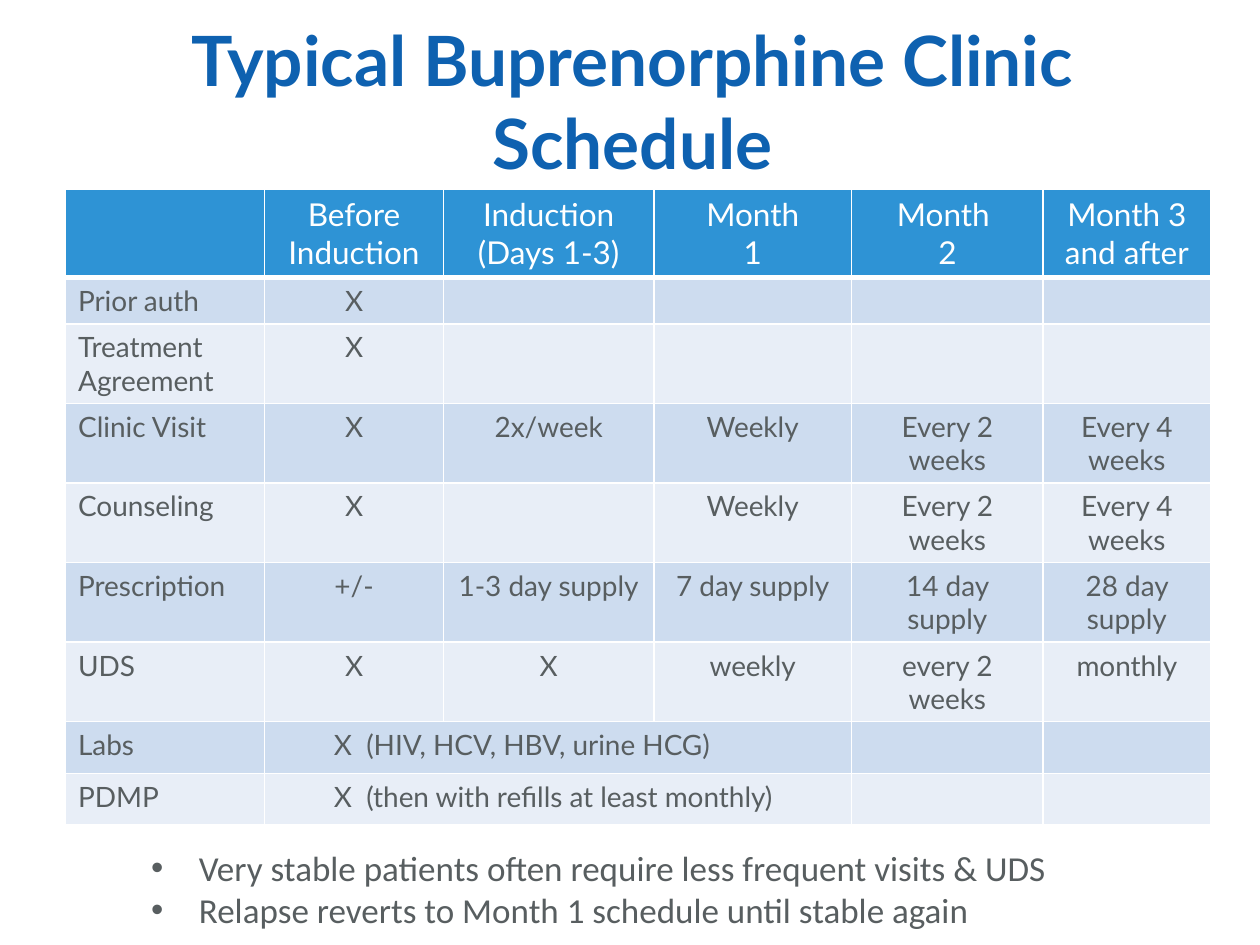
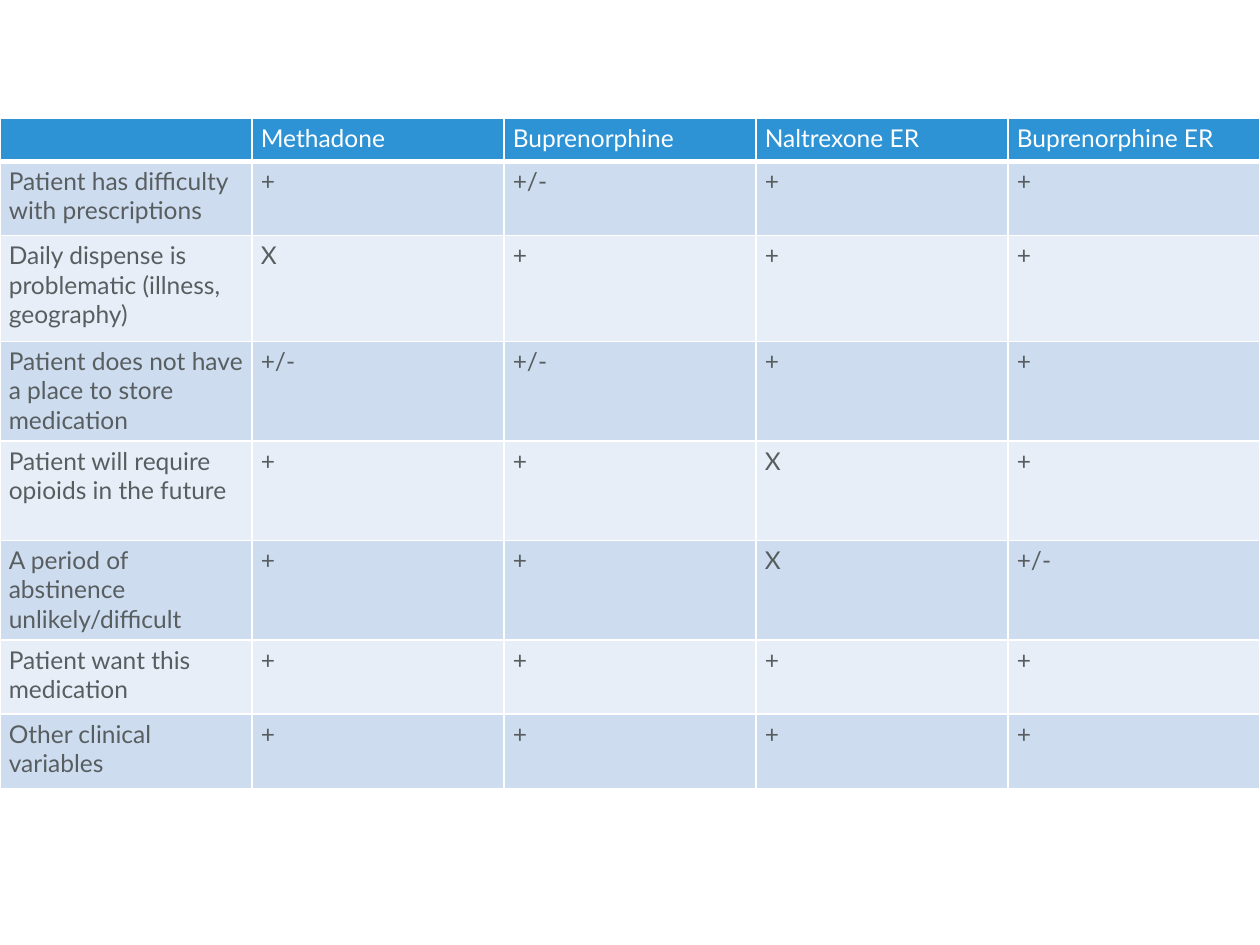
from lxml.etree import SubElement
from pptx import Presentation
from pptx.dml.color import RGBColor
from pptx.enum.text import MSO_ANCHOR as Anchor, MSO_AUTO_SIZE as AutoSize, PP_ALIGN as Align
from pptx.oxml.ns import qn
from pptx.util import Inches, Pt

TITLE_ONLY, BLANK = 5, 6


def color(hex_value):
    return RGBColor.from_string(hex_value)


class Deck:
    FONT = "Lato"
    TITLE, HEADER, TEXT, WHITE = "0E61B0", "2E93D5", "585E60", "FFFFFF"
    BANDS = "CDDCEF", "E8EEF7"

    def __init__(self):
        self.presentation = Presentation()
        self.presentation.slide_width = Inches(10)
        self.presentation.slide_height = Inches(7.5)
        self.slide = None

    def add_slide(self, layout):
        layouts = self.presentation.slide_layouts
        self.slide = self.presentation.slides.add_slide(layouts[layout])

    def run(self, paragraph, text, size, hex_value, bold=False, font=FONT):
        run = paragraph.add_run()
        run.text = text
        run.font.name = font
        run.font.size = Pt(size)
        run.font.bold = bold
        run.font.color.rgb = color(hex_value)

    def title(self, text, left, top, width, height):
        shape = self.slide.shapes.title
        shape.left, shape.top = Inches(left), Inches(top)
        shape.width, shape.height = Inches(width), Inches(height)
        frame = shape.text_frame
        frame.auto_size = AutoSize.NONE
        frame.vertical_anchor = Anchor.MIDDLE
        frame.paragraphs[0].alignment = Align.CENTER
        self.run(frame.paragraphs[0], text, 39.6, self.TITLE, bold=True)

    def bullets(self, lines, left, top, width, height):
        box = self.slide.shapes.add_textbox(
            Inches(left), Inches(top), Inches(width), Inches(height))
        frame = box.text_frame
        frame.word_wrap = True
        for index, line in enumerate(lines):
            paragraph = frame.add_paragraph() if index else frame.paragraphs[0]
            properties = paragraph._p.get_or_add_pPr()
            properties.set("marL", str(Inches(0.38)))
            properties.set("indent", str(-Inches(0.38)))
            SubElement(properties, qn("a:buFont"), typeface="Arial")
            SubElement(properties, qn("a:buChar"), char="•")
            self.run(paragraph, line, 20, self.TEXT, font="Calibri")

    def borders(self, cell, bottom):
        """Draw white cell borders; only the bottom width varies."""
        properties = cell._tc.get_or_add_tcPr()
        for side, width in (("L", 1), ("R", 1), ("T", 1), ("B", bottom)):
            line = SubElement(properties, qn(f"a:ln{side}"), w=str(Pt(width)))
            fill = SubElement(line, qn("a:solidFill"))
            SubElement(fill, qn("a:srgbClr"), val=self.WHITE)

    def cell(self, cell, text, size, is_header, fill, alignment, margins):
        self.borders(cell, bottom=3 if is_header else 1)
        cell.fill.solid()
        cell.fill.fore_color.rgb = color(fill)
        cell.margin_left = cell.margin_right = Inches(margins[0])
        cell.margin_top = cell.margin_bottom = Inches(margins[1])
        frame = cell.text_frame
        if not text:
            SubElement(frame.paragraphs[0]._p, qn("a:endParaRPr"), sz=str(size * 100))
            return
        for index, line in enumerate(text.split("\n")):
            paragraph = frame.add_paragraph() if index else frame.paragraphs[0]
            paragraph.alignment = alignment
            self.run(paragraph, line, size, self.WHITE if is_header else self.TEXT)

    def table(self, rows, left, top, widths, heights, header_size, body_size,
              alignment=Align.LEFT, margins=(0.1, 0.05)):
        """Add a banded table; alignment applies to all but the first column."""
        table = self.slide.shapes.add_table(
            len(rows), len(widths), Inches(left), Inches(top),
            Inches(sum(widths)), Inches(sum(heights))).table
        for column, width in zip(table.columns, widths):
            column.width = Inches(width)
        for row_index, (row, height) in enumerate(zip(rows, heights)):
            table.rows[row_index].height = Inches(height)
            is_header = row_index == 0
            fill = self.HEADER if is_header else self.BANDS[(row_index - 1) % 2]
            for column_index in range(len(widths)):
                text = row[column_index] if column_index < len(row) else ""
                self.cell(table.cell(row_index, column_index), text,
                          header_size if is_header else body_size, is_header, fill,
                          alignment if column_index else Align.LEFT, margins)
        return table


SCHEDULE = [
    ["", "Before Induction", "Induction\n(Days 1-3)", "Month\n1", "Month \n2",
     "Month 3 and after"],
    ["Prior auth", "X"],
    ["Treatment Agreement", "X"],
    ["Clinic Visit", "X", "2x/week", "Weekly", "Every 2 weeks", "Every 4 weeks"],
    ["Counseling", "X", "", "Weekly", "Every 2 weeks", "Every 4 weeks"],
    ["Prescription", "+/-", "1-3 day supply", "7 day supply", "14 day supply",
     "28 day supply"],
    ["UDS", "X", "X", "weekly", "every 2 weeks", "monthly"],
    ["Labs", "X  (HIV, HCV, HBV, urine HCG)"],
    ["PDMP", "X  (then with refills at least monthly)"],
]

MEDICATION_CHOICE = [
    ["", "Methadone", "Buprenorphine", "Naltrexone ER", "Buprenorphine ER"],
    ["Patient has difficulty with prescriptions", "+", "+/-", "+", "+"],
    ["Daily dispense is problematic (illness, geography)", "X", "+", "+", "+"],
    ["Patient does not have a place to store medication", "+/-", "+/-", "+", "+"],
    ["Patient will require opioids in the future", "+", "+", "X", "+"],
    ["A period of abstinence unlikely/difficult", "+", "+", "X", "+/-"],
    ["Patient want this medication", "+", "+", "+", "+"],
    ["Other clinical variables", "+", "+", "+", "+"],
]


def clinic_schedule(deck):
    deck.add_slide(TITLE_ONLY)
    table = deck.table(
        SCHEDULE, 0.52, 1.5, [1.58, 1.42, 1.67, 1.57, 1.52, 1.33],
        [0.7, 0.36] + [0.63] * 5 + [0.41] * 2, 18, 16, Align.CENTER)
    for row in (7, 8):
        spanning = table.cell(row, 1)
        spanning.merge(table.cell(row, 3))
        spanning.margin_left = Inches(0.55)
        spanning.text_frame.paragraphs[0].alignment = Align.LEFT
    deck.title("Typical Buprenorphine Clinic Schedule", 0.52, 0.17, 9, 1.25)
    deck.bullets(["Very stable patients often require less frequent visits & UDS",
                  "Relapse reverts to Month 1 schedule until stable again"],
                 1.1, 6.67, 8.42, 0.77)


def medication_choice(deck):
    deck.add_slide(BLANK)
    deck.table(MEDICATION_CHOICE, 0, 0.94, [2] * 5,
               [0.34, 0.59, 0.84, 0.79, 0.79, 0.79, 0.59, 0.59], 14, 14,
               margins=(0.07, 0.04))


def main():
    deck = Deck()
    clinic_schedule(deck)
    medication_choice(deck)
    deck.presentation.save("out.pptx")


if __name__ == "__main__":
    main()
